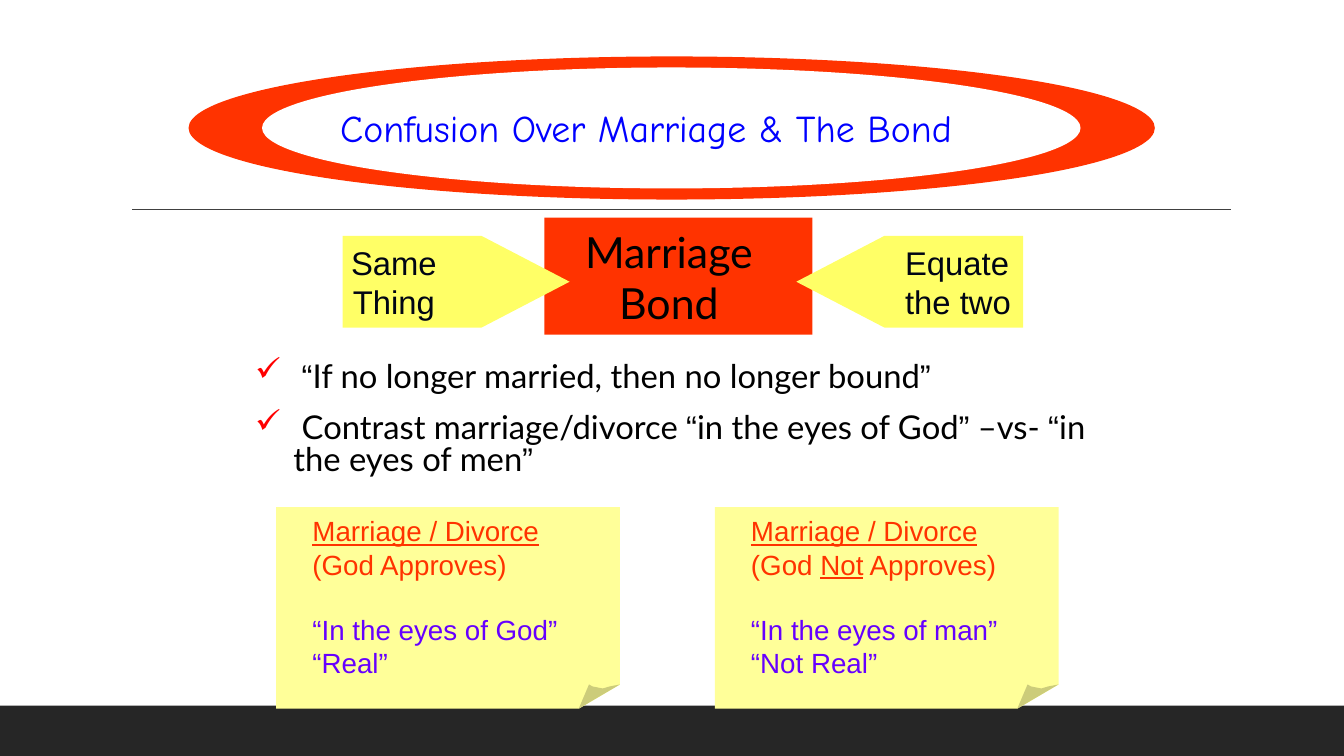
from lxml.etree import SubElement
from pptx import Presentation
from pptx.dml.color import RGBColor
from pptx.enum.shapes import MSO_CONNECTOR, MSO_SHAPE
from pptx.enum.text import MSO_ANCHOR, PP_ALIGN
from pptx.oxml.ns import qn
from pptx.util import Inches, Pt

RED, YELLOW, PAPER, FOLD = "FF3300", "FFFF66", "FFFF99", "CCCC7A"
INK, BLUE, PURPLE, BLACK = "000514", "0000FF", "6600FF", "000000"


def rgb(color):
    return RGBColor.from_string(color)


class Board:
    """Draws on one slide; lengths are percent of its width and height."""

    def __init__(self, prs):
        self.s = prs.slides.add_slide(prs.slide_layouts[6])
        self.col = prs.slide_width / 100
        self.row = prs.slide_height / 100

    def place(self, x, y, w, h):
        return (round(x * self.col), round(y * self.row),
                round(w * self.col), round(h * self.row))

    def paint(self, sp, color):
        sp.shadow.inherit = False
        sp.fill.solid()
        sp.fill.fore_color.rgb = rgb(color)
        sp.line.fill.background()
        return sp

    def shape(self, kind, at, color):
        return self.paint(self.s.shapes.add_shape(kind, *self.place(*at)), color)

    def outline(self, at, points, color):
        """Closed outline from points given as shares of the area."""
        x, y, w, h = self.place(*at)
        spots = [(round(x + u * w), round(y + v * h)) for u, v in points]
        builder = self.s.shapes.build_freeform(*spots[0], scale=1.0)
        builder.add_line_segments(spots[1:], close=True)
        return self.paint(builder.convert_to_shape(), color)

    def rule(self, x1, x2, y, color):
        line = self.s.shapes.add_connector(
            MSO_CONNECTOR.STRAIGHT, *self.place(x1, y, x2, y))
        line.line.color.rgb = rgb(color)
        line.line.width = Pt(1)
        SubElement(line._element.spPr, qn("a:effectLst"))

    def text(self, at, lines, size, font, color, align=PP_ALIGN.LEFT,
             inset=0.0, marked=None):
        """Parts of a line between bars are formatted by marked(font)."""
        tf = self.s.shapes.add_textbox(*self.place(*at)).text_frame
        tf.word_wrap = True
        tf.vertical_anchor = MSO_ANCHOR.MIDDLE
        tf.margin_left = Inches(inset)
        tf.margin_right = tf.margin_top = tf.margin_bottom = 0
        for i, line in enumerate(lines):
            p = tf.paragraphs[0] if i == 0 else tf.add_paragraph()
            p.alignment = align
            for k, part in enumerate(line.split("|")):
                if not part:
                    continue
                r = p.add_run()
                r.text = part
                r.font.size = Pt(size)
                r.font.name = font
                r.font.color.rgb = rgb(color)
                if k % 2:
                    marked(r.font)
        return tf

    def checklist(self, at, lines):
        def quote_font(font):
            font.name = "Arial"

        tf = self.text(at, lines, 23.4, "Lato", BLACK, marked=quote_font)
        for i, p in enumerate(tf.paragraphs):
            p.line_spacing = 0.8
            if i:
                p.space_before = Pt(14.4)
            pPr = p._p.get_or_add_pPr()
            pPr.set("marL", str(Inches(0.41)))
            pPr.set("indent", str(Inches(-0.38)))
            SubElement(SubElement(pPr, qn("a:buClr")), qn("a:srgbClr"), val="FF0000")
            SubElement(pPr, qn("a:buChar"), char="✓")

    def note(self, x, y, lines):
        def underline(font):
            font.underline = True

        at = (x, y, 25.58, 26.67)
        self.outline(at, [(0, 0), (1, 0), (1, 0.88), (0.88, 1), (0, 1)], PAPER)
        self.outline(at, [(0.88, 1), (0.91, 0.88), (0.92, 0.89), (0.95, 0.9),
                          (0.97, 0.89), (1, 0.88)], FOLD)
        tf = self.text((x + 2.25, y + 0.26, 21.4, 23.2), lines, 19.8, "Arial",
                       RED, inset=0.06, marked=underline)
        verdict = tf.paragraphs[2:]
        verdict[0].space_before = Pt(22.8)
        for p in verdict:
            for r in p.runs:
                r.font.color.rgb = rgb(PURPLE)


def main():
    prs = Presentation()
    prs.slide_width, prs.slide_height = Inches(13.33), Inches(7.5)
    b = Board(prs)

    # Footer band and rule
    b.shape(MSO_SHAPE.RECTANGLE, (0, 93.33, 100, 6.67), "262626")
    b.rule(9.83, 91.6, 27.73, "404040")

    # Title in a red ring
    b.shape(MSO_SHAPE.OVAL, (14.03, 7.47, 71.9, 18.93), RED)
    b.shape(MSO_SHAPE.OVAL, (19.5, 8.93, 60.9, 16), "FFFFFF")
    b.text((25, 13.33, 52.35, 7.07), ["Confusion Over Marriage & The Bond"],
           27, "Comic Neue", BLUE, inset=0.04)

    # Central box with an arrow from each side
    b.shape(MSO_SHAPE.RECTANGLE, (40.5, 28.8, 19.95, 15.47), RED)
    b.text((42.68, 29.73, 14.18, 13.73), ["Marriage", "Bond"],
           30.6, "Lato", BLACK, PP_ALIGN.CENTER)
    for x, turn, text_x, text_w, align, lines in (
            (25.5, 0, 25.95, 6.7, PP_ALIGN.CENTER, ["Same", "Thing"]),
            (59.25, 180, 67.35, 8.8, PP_ALIGN.LEFT, ["Equate", "the two"])):
        arrow = b.shape(MSO_SHAPE.PENTAGON, (x, 31.2, 16.88, 12.13), YELLOW)
        arrow.adjustments[0] = 0.96
        arrow.rotation = turn
        b.text((text_x, 32, text_w, 10.53), lines, 23.4, "Arial", INK, align)

    # Arguments
    b.checklist((18.75, 46.8, 64.5, 17.6), [
        " |“|If no longer married, then no longer bound|”|",
        " Contrast marriage/divorce |“|in the eyes of God|”| –vs- "
        "|“|in the eyes of men|”|"])

    # Contrasting notes
    b.note(20.55, 67.07, ["|Marriage / Divorce|", "(God Approves)",
                          "“In the eyes of God”", "“Real”"])
    b.note(53.18, 67.07, ["|Marriage / Divorce|", "(God |Not| Approves)",
                          "“In the eyes of man”", "“Not Real”"])

    prs.save("out.pptx")


if __name__ == "__main__":
    main()
